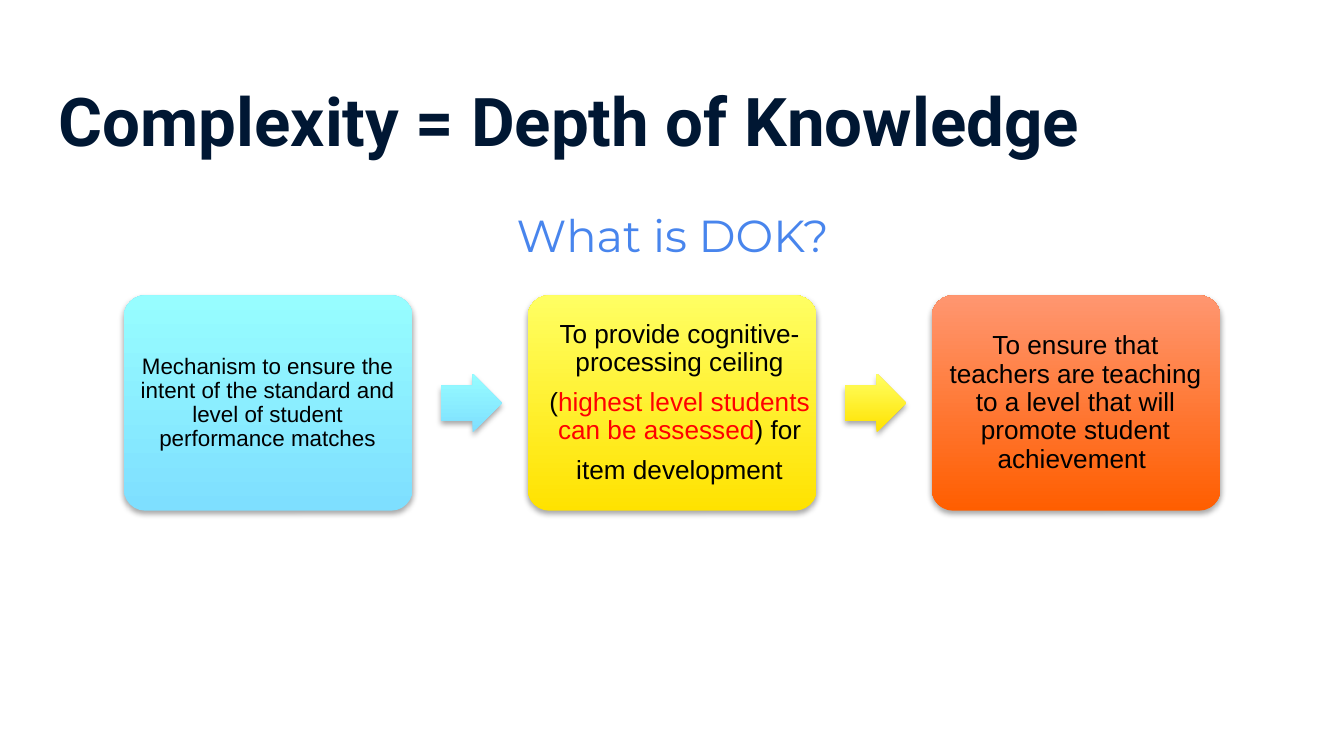
import pptx
import pptx.util
import pptx.dml.color
import pptx.enum.shapes
import pptx.enum.text
import pptx.oxml
import pptx.oxml.ns

Pt = pptx.util.Pt
SHAPE = pptx.enum.shapes.MSO_SHAPE
ALIGN = pptx.enum.text.PP_ALIGN
ANCHOR = pptx.enum.text.MSO_ANCHOR

# Content: each paragraph is a list of (text, colour name) runs
COLORS = {
    "navy": "001733", "blue": "4885ED", "black": "000000", "red": "FF0000",
    "cyan bottom": "7EDFFF", "cyan top": "97FDFF",
    "yellow bottom": "FFE200", "yellow top": "FFFF63",
    "orange bottom": "FF5E00", "orange top": "FF9670",
}
TITLE = [[("Complexity = Depth of Knowledge", "navy")]]
QUESTION = [[("What is DOK?", "blue")]]
STEPS = [
    {"hue": "cyan", "size": 12, "text_width": 146.2, "text": [
        [("Mechanism to ensure the intent of the standard and level of "
          "student performance matches", "black")]]},
    {"hue": "yellow", "size": 14, "text_width": 154.8, "text": [
        [("To provide cognitive-processing ceiling", "black")],
        [("(", "black"), ("highest level students can be assessed", "red"),
         (") for", "black")],
        [("item development", "black")]]},
    {"hue": "orange", "size": 14, "text_width": 146.2, "text": [
        [("To ensure that teachers are teaching to a level that will "
          "promote student achievement ", "black")]]},
]

# Layout in points
CARD_LEFT, CARD_TOP, CARD_WIDTH, CARD_HEIGHT = 66.3, 158.2, 154.8, 115.4
CARD_PITCH = 216.4
CARD_INSET = 4
ARROW_WIDTH, ARROW_HEIGHT, ARROW_GAP = 32.8, 31.6, 15.1

SHADOW = (
    f'<a:outerShdw {pptx.oxml.ns.nsdecls("a")} blurRad="{int(Pt(3.1))}" '
    f'dist="{int(Pt(1.8))}" dir="5400000" rotWithShape="0">'
    f'<a:srgbClr val="{COLORS["black"]}"><a:alpha val="35000"/></a:srgbClr>'
    '</a:outerShdw>'
)


def rgb(name):
    return pptx.dml.color.RGBColor.from_string(COLORS[name])


def add_text(slide, paragraphs, box, *, font, size, bold=False, align=ALIGN.LEFT,
             anchor=ANCHOR.TOP, insets=(7.2, 7.2), line_spacing=None, space_before=0):
    frame = slide.shapes.add_textbox(*map(Pt, box)).text_frame
    frame.word_wrap = True
    frame.vertical_anchor = anchor
    frame.margin_left = frame.margin_right = Pt(insets[0])
    frame.margin_top = frame.margin_bottom = Pt(insets[1])
    for index, runs in enumerate(paragraphs):
        paragraph = frame.add_paragraph() if index else frame.paragraphs[0]
        paragraph.alignment = align
        paragraph.line_spacing = line_spacing
        if index:
            paragraph.space_before = Pt(space_before)
        for text, color in runs:
            run = paragraph.add_run()
            run.text = text
            run.font.name = font
            run.font.size = Pt(size)
            run.font.bold = bold
            run.font.color.rgb = rgb(color)


def add_gradient_shape(slide, preset, box, hue, adjustments):
    shape = slide.shapes.add_shape(preset, *map(Pt, box))
    for index, value in enumerate(adjustments):
        shape.adjustments[index] = value
    shape.fill.gradient()
    shape.fill.gradient_angle = 90
    for stop, end in zip(shape.fill.gradient_stops, ("bottom", "top")):
        stop.color.rgb = rgb(f"{hue} {end}")
    shape.line.fill.background()
    shape.shadow.inherit = False
    effects = shape._element.spPr.find(pptx.oxml.ns.qn("a:effectLst"))
    effects.append(pptx.oxml.parse_xml(SHADOW))


def main():
    deck = pptx.Presentation()
    deck.slide_width, deck.slide_height = Pt(720), Pt(405)
    slide = deck.slides.add_slide(deck.slide_layouts[6])

    # Headings
    add_text(slide, TITLE, (24.5, 35.3, 671, 45.4), font="Roboto", size=36, bold=True)
    add_text(slide, QUESTION, (200.9, 108, 319, 50.4), font="Montserrat", size=24,
             align=ALIGN.CENTER, insets=(7.2, 3.6))

    # Cards, with an arrow between neighbours
    for index, step in enumerate(STEPS):
        left = CARD_LEFT + index * CARD_PITCH
        add_gradient_shape(slide, SHAPE.ROUNDED_RECTANGLE,
                           (left, CARD_TOP, CARD_WIDTH, CARD_HEIGHT), step["hue"], [0.1])
        add_text(slide, step["text"],
                 (left + CARD_INSET, CARD_TOP + CARD_INSET, step["text_width"],
                  CARD_HEIGHT - 2 * CARD_INSET),
                 font="Arial", size=step["size"], align=ALIGN.CENTER,
                 anchor=ANCHOR.MIDDLE, insets=(5, 5), line_spacing=0.9, space_before=6.3)
        if index < len(STEPS) - 1:
            add_gradient_shape(slide, SHAPE.RIGHT_ARROW,
                               (left + CARD_WIDTH + ARROW_GAP,
                                CARD_TOP + (CARD_HEIGHT - ARROW_HEIGHT) / 2,
                                ARROW_WIDTH, ARROW_HEIGHT), step["hue"], [0.6, 0.5])

    deck.save("out.pptx")


if __name__ == "__main__":
    main()
